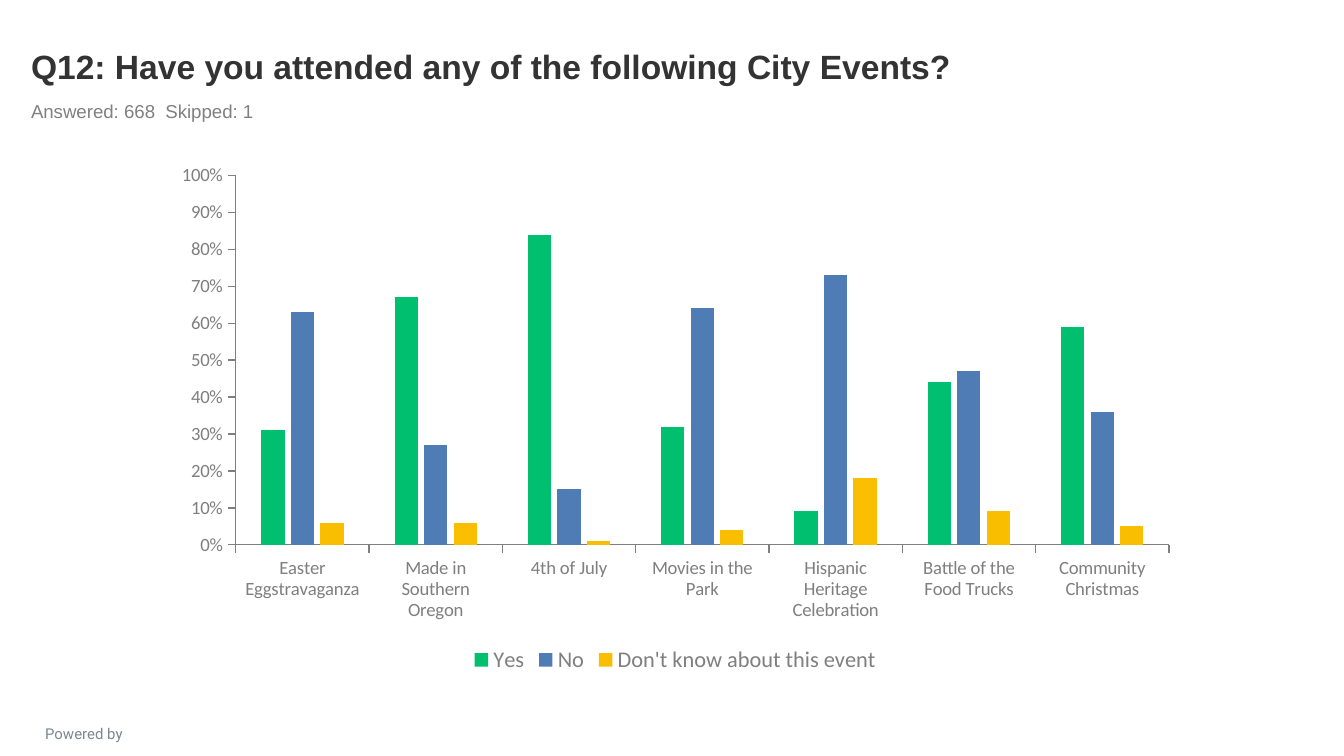
import pptx
import pptx.chart.data
import pptx.dml.color
import pptx.enum.chart
import pptx.enum.text
import pptx.oxml
import pptx.oxml.ns
import pptx.util

Pt = pptx.util.Pt
ALIGN = pptx.enum.text.PP_ALIGN
ANCHOR = pptx.enum.text.MSO_ANCHOR


def color(hex_value):
    return pptx.dml.color.RGBColor.from_string(hex_value)


class SurveySlide:
    heading_font = "Arial"
    chart_font = "Calibri"
    dark = "333333"
    gray = "7F7F7F"

    def __init__(self, slide):
        self.slide = slide

    def style_font(self, font, name, size, hex_value, bold=False):
        font.name = name
        font.size = Pt(size)
        font.bold = bold
        font.color.rgb = color(hex_value)

    def place(self, shape, left, top, width, height):
        shape.left, shape.top = Pt(left), Pt(top)
        shape.width, shape.height = Pt(width), Pt(height)

    def fill_text(self, shape, text, anchor, align, name, size, hex_value, bold=False):
        frame = shape.text_frame
        frame.text = text
        frame.word_wrap = True
        frame.auto_size = pptx.enum.text.MSO_AUTO_SIZE.NONE
        frame.vertical_anchor = anchor
        paragraph = frame.paragraphs[0]
        paragraph.alignment = align
        paragraph.space_before = Pt(0)
        for run in paragraph.runs:
            self.style_font(run.font, name, size, hex_value, bold)
        return paragraph

    def title(self, text, *box):
        question = self.slide.shapes.title
        self.place(question, *box)
        self.fill_text(question, text, ANCHOR.BOTTOM, ALIGN.LEFT,
                       self.heading_font, 18, self.dark, True)

    def response_counts(self, text, tab_position, *box):
        counts = self.slide.placeholders[1]
        self.place(counts, *box)
        paragraph = self.fill_text(counts, text, ANCHOR.TOP, ALIGN.LEFT,
                                   self.heading_font, 10, "808080")
        properties = paragraph._p.get_or_add_pPr()
        properties.set("marL", "0")
        properties.set("indent", "0")
        namespace = pptx.oxml.ns.nsdecls("a")
        properties.append(pptx.oxml.parse_xml(f"<a:buNone {namespace}/>"))
        properties.append(pptx.oxml.parse_xml(
            f'<a:tabLst {namespace}><a:tab pos="{Pt(tab_position)}" algn="l"/></a:tabLst>'))

    def footer(self, text, *box):
        credit = self.slide.shapes.add_textbox(*(Pt(length) for length in box))
        self.fill_text(credit, text, ANCHOR.TOP, ALIGN.CENTER, "Roboto", 8, "7C878E")

    def style_axis(self, axis):
        axis.has_major_gridlines = False
        axis.major_tick_mark = pptx.enum.chart.XL_TICK_MARK.OUTSIDE
        axis.minor_tick_mark = pptx.enum.chart.XL_TICK_MARK.NONE
        axis.format.line.color.rgb = color(self.gray)
        axis.format.line.width = Pt(0.75)
        self.style_font(axis.tick_labels.font, self.chart_font, 10, self.gray)

    def column_chart(self, categories, answers, *box):
        data = pptx.chart.data.CategoryChartData(number_format="0%")
        data.categories = categories
        for answer, (_, shares) in answers.items():
            data.add_series(answer, shares)
        chart = self.slide.shapes.add_chart(
            pptx.enum.chart.XL_CHART_TYPE.COLUMN_CLUSTERED,
            *(Pt(length) for length in box), data).chart
        chart.has_title = False
        self.style_font(chart.font, self.chart_font, 18, self.dark)

        plot = chart.plots[0]
        plot.gap_width = 219
        plot.overlap = -27
        plot.vary_by_categories = False
        for series, (fill, _) in zip(plot.series, answers.values()):
            series.format.fill.solid()
            series.format.fill.fore_color.rgb = color(fill)
            series.invert_if_negative = False

        for axis in (chart.category_axis, chart.value_axis):
            self.style_axis(axis)
        chart.category_axis.tick_label_position = pptx.enum.chart.XL_TICK_LABEL_POSITION.LOW
        chart.value_axis.minimum_scale = 0
        chart.value_axis.maximum_scale = 1
        chart.value_axis.major_unit = 0.1
        chart.value_axis.tick_labels.number_format = "0%"
        chart.value_axis.tick_labels.number_format_is_linked = False

        chart.has_legend = True
        chart.legend.position = pptx.enum.chart.XL_LEGEND_POSITION.BOTTOM
        chart.legend.include_in_layout = False
        self.style_font(chart.legend.font, self.chart_font, 12, self.gray)


def main():
    presentation = pptx.Presentation()
    presentation.slide_width = Pt(720)
    presentation.slide_height = Pt(405)
    survey = SurveySlide(presentation.slides.add_slide(presentation.slide_layouts[1]))

    events = ["Easter Eggstravaganza", "Made in Southern Oregon", "4th of July",
              "Movies in the Park", "Hispanic Heritage Celebration",
              "Battle of the Food Trucks", "Community Christmas"]
    answers = {
        "Yes": ("00BF6F", [0.31, 0.67, 0.84, 0.32, 0.09, 0.44, 0.59]),
        "No": ("507CB6", [0.63, 0.27, 0.15, 0.64, 0.73, 0.47, 0.36]),
        "Don't know about this event":
            ("F9BE00", [0.06, 0.06, 0.01, 0.04, 0.18, 0.09, 0.05]),
    }

    survey.title("Q12: Have you attended any of the following City Events?",
                 9.4, 6.5, 648, 43.2)
    survey.response_counts("Answered: 668\tSkipped: 1", 75, 9.4, 49.7, 648, 18.7)
    survey.column_chart(events, answers, 86.4, 82.8, 550.8, 280.8)
    survey.footer("Powered by", 3.6, 384.5, 82.8, 13)
    presentation.save("out.pptx")


if __name__ == "__main__":
    main()
